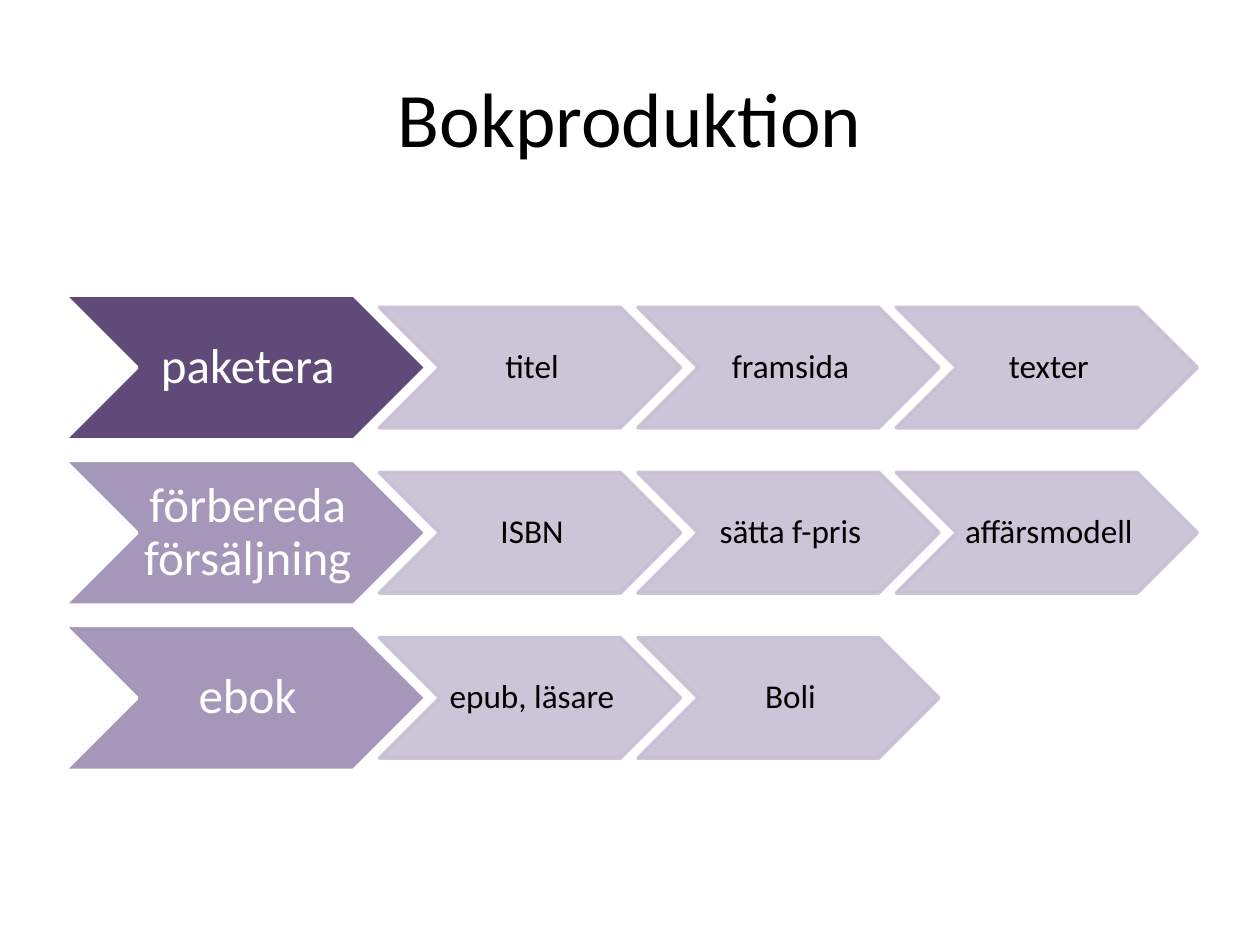
from lxml import etree
from pptx import Presentation
from pptx.dml.color import RGBColor
from pptx.enum.shapes import MSO_SHAPE
from pptx.enum.text import MSO_ANCHOR, PP_ALIGN
from pptx.oxml.ns import qn
from pptx.util import Cm, Pt

CHEVRON = MSO_SHAPE.CHEVRON
MIDDLE = MSO_ANCHOR.MIDDLE
CENTER = PP_ALIGN.CENTER

# Content: each row is a stage, its colour and its steps
TITLE = "Bokproduktion"
ROWS = [
    ("paketera", "5F4A78", ["titel", "framsida", "texter"]),
    ("förbereda försäljning", "A597B9", ["ISBN", "sätta f-pris", "affärsmodell"]),
    ("ebok", "A597B9", ["epub, läsare", "Boli"]),
]
STEP = "C7BFD3"
WHITE, BLACK = "FFFFFF", "000000"

# Layout in cm
LEFT, TOP, ROW_GAP = 1.3, 5.95, 3.33
HEAD_W, HEAD_H = 7.29, 2.92
STEP_X, STEP_GAP = 7.65, 5.21
STEP_W, STEP_H = 6.07, 2.43


def paint(color, code, alpha=None):
    color.rgb = RGBColor.from_string(code)
    if alpha:
        for node in color._xFill.iter(qn("a:srgbClr")):
            etree.SubElement(node, qn("a:alpha"), val=str(alpha * 1000))


def write(frame, text, size, code):
    frame.word_wrap = True
    frame.vertical_anchor = MIDDLE
    para = frame.paragraphs[0]
    para.alignment = CENTER
    run = para.add_run()
    run.text = text
    run.font.name = "Calibri"
    run.font.size = Pt(size)
    paint(run.font.color, code)
    return para


def arrow(box, text, size, ink, fill, edge, pads, alpha=None):
    shape = slide.shapes.add_shape(CHEVRON, *map(Cm, box))
    shape.shadow.inherit = False
    shape.fill.solid()
    paint(shape.fill.fore_color, fill, alpha)
    shape.line.width = Pt(2)
    shape.line.fill.solid()
    paint(shape.line.fill.fore_color, edge, alpha)
    frame = shape.text_frame
    frame.margin_left, frame.margin_right = Cm(pads[0]), 0
    frame.margin_top = frame.margin_bottom = Cm(pads[1])
    write(frame, text, size, ink).line_spacing = 0.9


deck = Presentation()
deck.slide_width, deck.slide_height = Cm(25.4), Cm(19.05)
slide = deck.slides.add_slide(deck.slide_layouts[5])

# Title
title = slide.shapes.title
title.left, title.top = Cm(1.27), Cm(0.76)
title.width, title.height = Cm(22.86), Cm(3.18)
write(title.text_frame, TITLE, 44, BLACK)

# Rows of chevrons, steps centred on their stage
for i, (stage, fill, steps) in enumerate(ROWS):
    top = TOP + i * ROW_GAP
    arrow((LEFT, top, HEAD_W, HEAD_H), stage, 28, WHITE, fill, WHITE, (0.1, 0.05))
    mid = top + (HEAD_H - STEP_H) / 2
    for j, step in enumerate(steps):
        box = (STEP_X + j * STEP_GAP, mid, STEP_W, STEP_H)
        arrow(box, step, 19, BLACK, STEP, STEP, (0.08, 0.03), 90)

deck.save("out.pptx")
